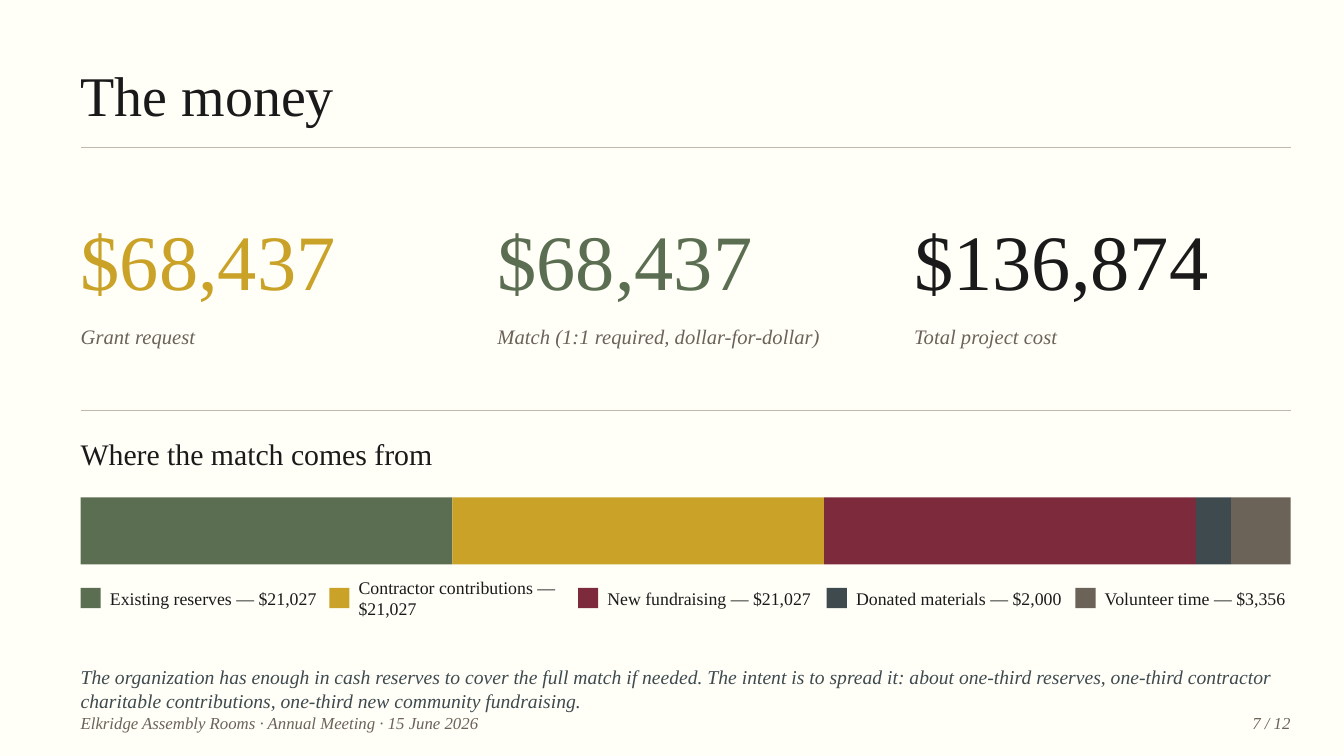
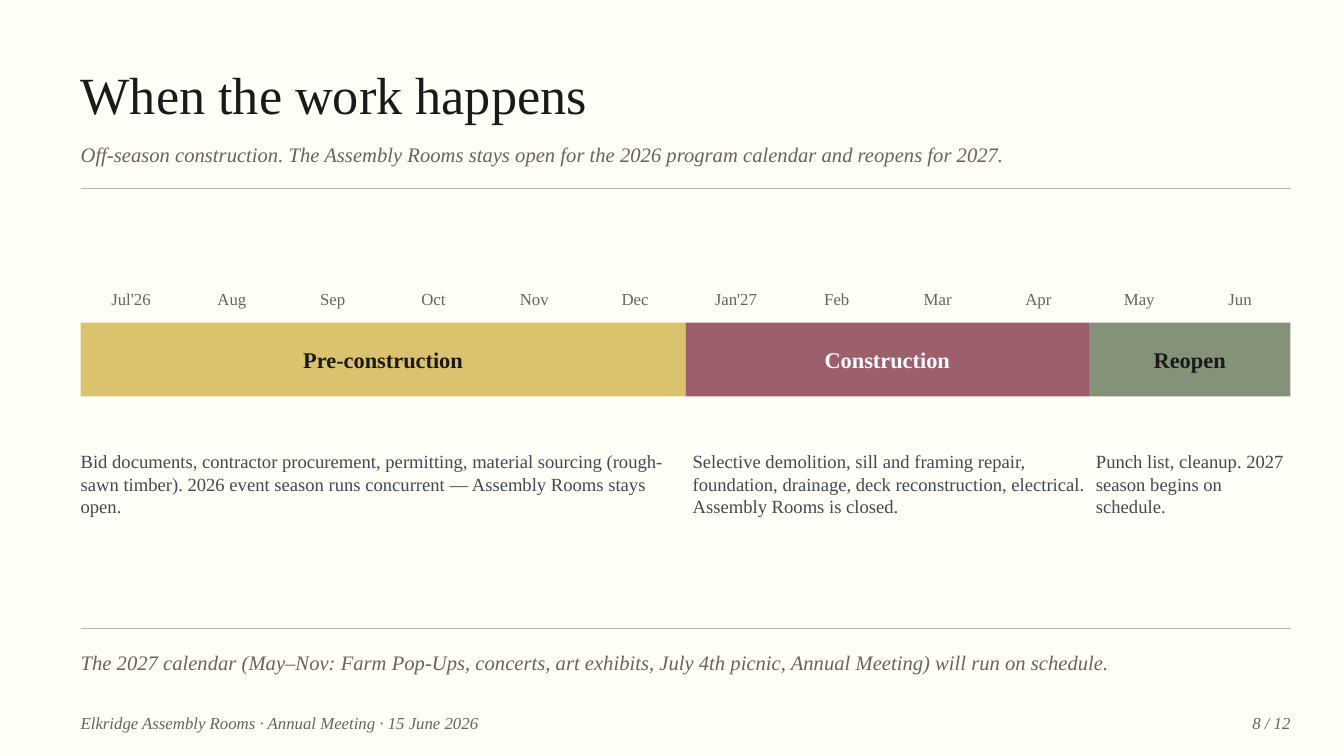
from dataclasses import dataclass
from itertools import accumulate

import pptx
import pptx.dml.color
import pptx.enum.shapes
import pptx.enum.text
import pptx.oxml
import pptx.oxml.ns
import pptx.util

ALIGN = pptx.enum.text.PP_ALIGN
ANCHOR = pptx.enum.text.MSO_ANCHOR


@dataclass(frozen=True)
class Theme:
    font: str = "Times New Roman"
    paper: str = "FFFFF8"
    white: str = "FFFFFF"
    ink: str = "1A1A1A"
    slate: str = "3F4A4F"
    stone: str = "6B6258"
    hairline: str = "BFB8AD"
    gold: str = "C9A227"
    green: str = "5B6E51"
    wine: str = "7D2A3D"
    figure: float = 56
    title: float = 40
    long_title: float = 37.3
    heading: float = 21.3
    phase: float = 16
    caption: float = 14.7
    remark: float = 14
    body: float = 13.3
    legend: float = 12.7
    small: float = 12


THEME = Theme()
COLUMNS = 12
LEFT_MARGIN = 0.8
ROWS_PER_INCH = 15
PAGES = 12
FOOTER = "Elkridge Assembly Rooms · Annual Meeting · 15 June 2026"


def rgb(color):
    return pptx.dml.color.RGBColor.from_string(color)


def write(frame, text, size=THEME.body, color=THEME.ink, bold=False, italic=False,
          align=ALIGN.LEFT, anchor=ANCHOR.MIDDLE):
    frame.word_wrap = True
    frame.auto_size = pptx.enum.text.MSO_AUTO_SIZE.NONE
    frame.vertical_anchor = anchor
    frame.margin_left = frame.margin_top = frame.margin_right = frame.margin_bottom = 0
    paragraph = frame.paragraphs[0]
    paragraph.alignment = align
    run = paragraph.add_run()
    run.text = text
    run.font.name = THEME.font
    run.font.size = pptx.util.Pt(size)
    run.font.color.rgb = rgb(color)
    run.font.bold = bold
    run.font.italic = italic


class Deck:
    def __init__(self):
        self.presentation = pptx.Presentation()
        self.presentation.slide_width = pptx.util.Inches(13.33)
        self.presentation.slide_height = pptx.util.Inches(7.5)
        background = self.presentation.slide_master.background.fill
        background.solid()
        background.fore_color.rgb = rgb(THEME.paper)
        self.slide = None

    def box(self, column, row, columns, rows):
        return (pptx.util.Inches(LEFT_MARGIN + column), pptx.util.Inches(row / ROWS_PER_INCH),
                pptx.util.Inches(columns), pptx.util.Inches(rows / ROWS_PER_INCH))

    def start(self, title, page, size=THEME.title):
        layout = self.presentation.slide_layouts.get_by_name("Title Only")
        self.slide = self.presentation.slides.add_slide(layout)
        heading = self.slide.shapes.title
        heading.left, heading.top, heading.width, heading.height = self.box(0, 9, COLUMNS, 10)
        write(heading.text_frame, title, size=size)
        footer = dict(size=THEME.small, color=THEME.stone, italic=True)
        self.text(FOOTER, 0, 105.5, 8, 4, **footer)
        self.text(f"{page} / {PAGES}", COLUMNS - 1, 105.5, 1, 4, align=ALIGN.RIGHT, **footer)

    def text(self, text, column, row, columns, rows, **style):
        box = self.slide.shapes.add_textbox(*self.box(column, row, columns, rows))
        write(box.text_frame, text, **style)

    def caption(self, text, column, row, columns):
        self.text(text, column, row, columns, 6,
                  size=THEME.caption, color=THEME.stone, italic=True)

    def rule(self, row):
        left, top, width, _ = self.box(0, row, COLUMNS, 0)
        rule = self.slide.shapes.add_connector(
            pptx.enum.shapes.MSO_CONNECTOR.STRAIGHT, left, top, left + width, top)
        rule.line.color.rgb = rgb(THEME.hairline)
        rule.line.width = pptx.util.Pt(0.5)
        properties = rule.element.spPr
        properties.append(pptx.oxml.parse_xml(
            f'<a:effectLst {pptx.oxml.ns.nsdecls("a")}/>'))

    def block(self, color, column, row, columns, rows, opacity=100):
        block = self.slide.shapes.add_shape(
            pptx.enum.shapes.MSO_SHAPE.RECTANGLE, *self.box(column, row, columns, rows))
        block.shadow.inherit = False
        block.line.fill.background()
        block.fill.solid()
        block.fill.fore_color.rgb = rgb(color)
        if opacity < 100:
            tint = block.element.spPr.find(".//" + pptx.oxml.ns.qn("a:srgbClr"))
            tint.append(pptx.oxml.parse_xml(
                f'<a:alpha {pptx.oxml.ns.nsdecls("a")} val="{opacity * 1000}"/>'))
        return block


def money_slide(deck):
    deck.start("The money", 7)
    deck.rule(22)

    metrics = [
        ("$68,437", "Grant request", THEME.gold),
        ("$68,437", "Match (1:1 required, dollar-for-dollar)", THEME.green),
        ("$136,874", "Total project cost", THEME.ink),
    ]
    metric_pitch = (COLUMNS + 0.4) / len(metrics)
    metric_width = metric_pitch - 4 / ROWS_PER_INCH
    for index, (amount, label, color) in enumerate(metrics):
        column = index * metric_pitch
        deck.text(amount, column, 30, metric_width, 17, size=THEME.figure, color=color)
        deck.caption(label, column, 47, metric_width)

    deck.rule(61)
    deck.text("Where the match comes from", 0, 64, COLUMNS, 7, size=THEME.heading)

    sources = [
        ("Existing reserves", 21027, THEME.green),
        ("Contractor contributions", 21027, THEME.gold),
        ("New fundraising", 21027, THEME.wine),
        ("Donated materials", 2000, THEME.slate),
        ("Volunteer time", 3356, THEME.stone),
    ]
    total = sum(amount for _, amount, _ in sources)
    legend_pitch = (COLUMNS + 5 / ROWS_PER_INCH) / len(sources)
    bar_column = 0
    for index, (source, amount, color) in enumerate(sources):
        share = COLUMNS * amount / total
        deck.block(color, bar_column, 74, share, 10)
        bar_column += share
        key_column = index * legend_pitch
        deck.block(color, key_column, 87.5, 0.2, 3)
        deck.text(f"{source} — ${amount:,}", key_column + 0.29, 86.5, legend_pitch, 5,
                  size=THEME.legend)

    deck.text("The organization has enough in cash reserves to cover the full match if needed. "
              "The intent is to spread it: about one-third reserves, one-third contractor "
              "charitable contributions, one-third new community fundraising.",
              0, 97, COLUMNS, 11, size=THEME.remark, color=THEME.slate, italic=True)


def schedule_slide(deck):
    deck.start("When the work happens", 8, size=THEME.long_title)
    deck.caption("Off-season construction. The Assembly Rooms stays open for the 2026 program "
                 "calendar and reopens for 2027.", 0, 20, COLUMNS)
    deck.rule(28)

    months = "Jul'26 Aug Sep Oct Nov Dec Jan'27 Feb Mar Apr May Jun".split()
    for column, month in enumerate(months):
        deck.text(month, column, 42, 1, 5,
                  size=THEME.small, color=THEME.stone, align=ALIGN.CENTER)

    phases = [
        ("Pre-construction", 6, THEME.gold, 65, THEME.ink, 0, 0.2,
         "Bid documents, contractor procurement, permitting, material sourcing (rough-sawn "
         "timber). 2026 event season runs concurrent — Assembly Rooms stays open."),
        ("Construction", 4, THEME.wine, 75, THEME.white, 0.07, 0,
         "Selective demolition, sill and framing repair, foundation, drainage, deck "
         "reconstruction, electrical. Assembly Rooms is closed."),
        ("Reopen", 2, THEME.green, 75, THEME.ink, 0.07, 0,
         "Punch list, cleanup. 2027 season begins on schedule."),
    ]
    starts = accumulate((phase[1] for phase in phases), initial=0)
    for start, (name, length, color, opacity, name_color, indent, gap, work) in zip(starts, phases):
        bar = deck.block(color, start, 48, length, 11, opacity=opacity)
        write(bar.text_frame, name, size=THEME.phase, color=name_color, bold=True,
              align=ALIGN.CENTER)
        deck.text(work, start + indent, 67, length - indent - gap, 24,
                  color=THEME.slate, anchor=ANCHOR.TOP)

    deck.rule(93.5)
    deck.caption("The 2027 calendar (May–Nov: Farm Pop-Ups, concerts, art exhibits, July 4th "
                 "picnic, Annual Meeting) will run on schedule.", 0, 95.5, COLUMNS)


def main():
    deck = Deck()
    money_slide(deck)
    schedule_slide(deck)
    deck.presentation.save("out.pptx")


if __name__ == "__main__":
    main()
